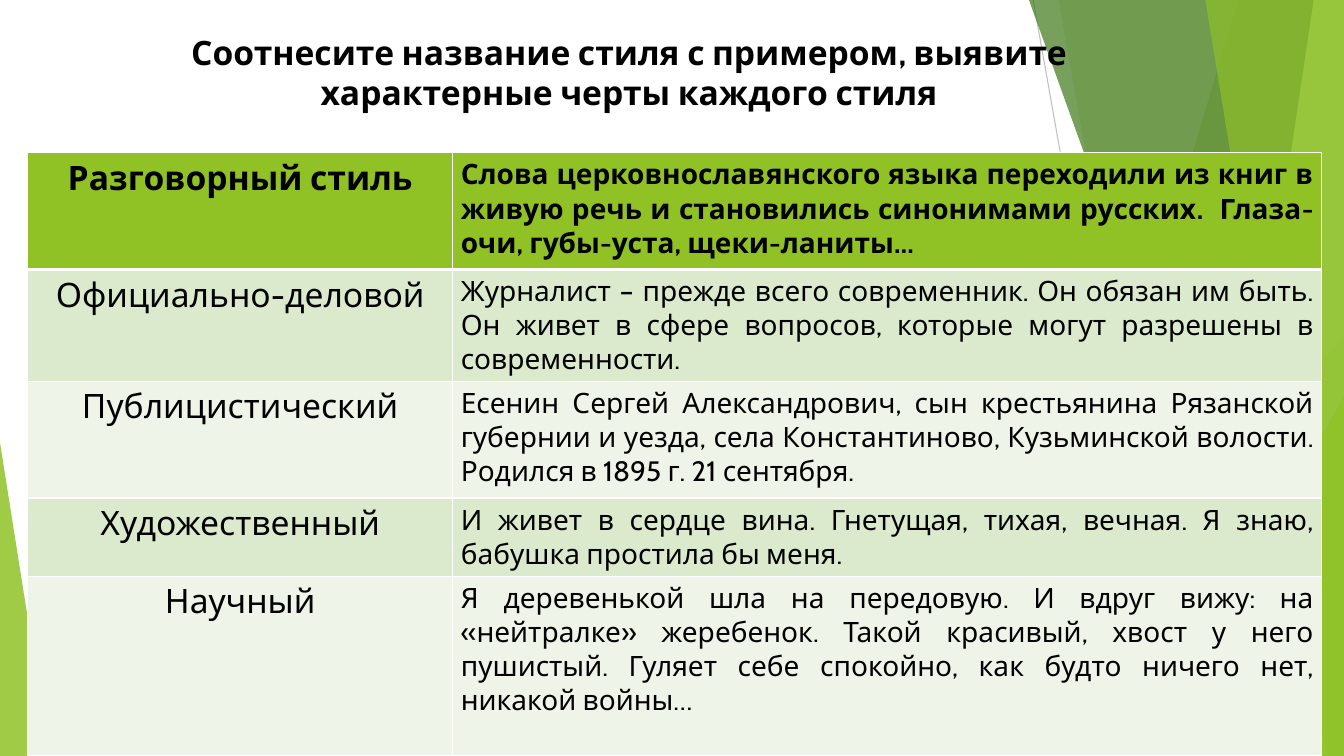
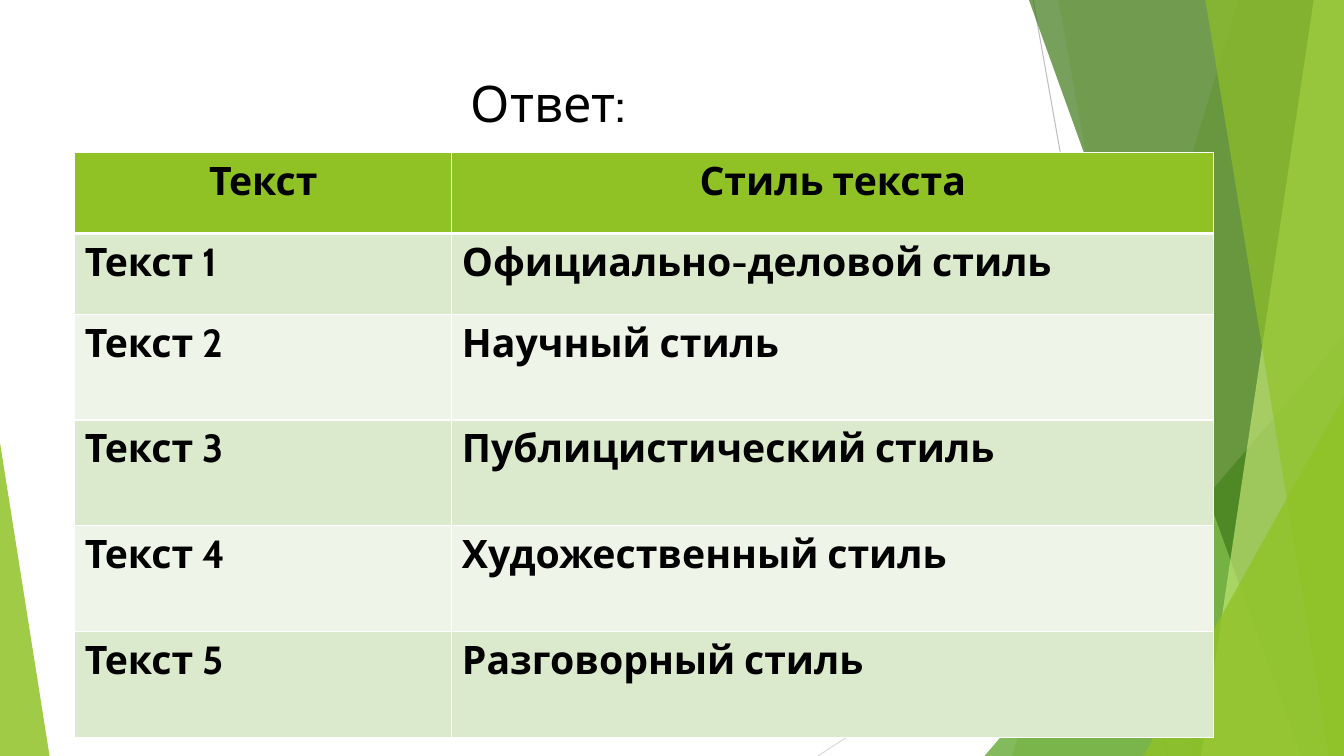
"""Build two slides on text styles: a matching exercise and its answers."""
from dataclasses import dataclass
from typing import Optional, Union

import lxml.etree
import pptx
import pptx.dml.color
import pptx.enum.shapes
import pptx.enum.text
import pptx.oxml
import pptx.oxml.ns
import pptx.util

COLUMNS, ROWS = 160, 90
CELL = pptx.util.Inches(7.5) / ROWS
FONT = "Cabin"
BLACK, WHITE = "000000", "FFFFFF"
LIME, GREEN, FOREST, PALE_LIME = "90C226", "54A021", "3F7819", "C0E474"
BAND_COLOURS = ("DBE9CD", "EEF4E8")
ALIGN = pptx.enum.text.PP_ALIGN
qn = pptx.oxml.ns.qn


@dataclass(frozen=True)
class Ray:
    start: tuple[float, float]
    end: tuple[float, float]
    colour: str


@dataclass(frozen=True)
class Veil:
    top_x: float
    bottom_x: float
    colour: str
    opacity: int


@dataclass(frozen=True)
class Corner:
    left: float
    top: float
    width: float
    apex: float
    colour: str
    opacity: int


@dataclass(frozen=True)
class Title:
    text: str
    top: float
    width: float
    height: float
    size: int


@dataclass(frozen=True)
class TextColumn:
    width: float
    size: int
    align: ALIGN
    header_align: ALIGN


@dataclass(frozen=True)
class Grid:
    left: float
    columns: tuple[TextColumn, ...]
    heights: tuple[float, ...]
    rows: tuple[tuple[str, ...], ...]
    bold_body: bool
    side_inset: Optional[float] = None


DECOR: tuple[Union[Ray, Veil, Corner], ...] = (
    Ray((123, 0), (139, ROWS), "BFBFBF"),
    Ray((COLUMNS, 48.4), (97.4, ROWS), "D9D9D9"),
    Veil(147.4, 120.5, LIME, 30),
    Veil(126, 142, LIME, 20),
    Corner(117.2, 40, 42.8, 1, GREEN, 72),
    Veil(122.5, 154.9, FOREST, 70),
    Veil(156.4, 143, PALE_LIME, 70),
    Veil(143.5, 158.2, LIME, 65),
    Corner(136.1, 47.2, 23.9, 1, LIME, 80),
    Corner(0, 52.7, 5.9, 0, LIME, 85),
)
MARGIN = 8.9
TABLE_TOP = 18.2

EXERCISE_TITLE = Title(
    "Соотнесите название стиля с примером, выявите характерные черты каждого стиля",
    3.2, 132, 21.4, 24)
EXERCISE = Grid(
    3.3,
    (TextColumn(50.6, 24, ALIGN.CENTER, ALIGN.CENTER),
     TextColumn(103.4, 20, ALIGN.JUSTIFY, ALIGN.JUSTIFY)),
    (13.9, 13.3, 13.9, 9.3, 21.4),
    (("Разговорный стиль",
      "Слова церковнославянского языка переходили из книг в живую речь и становились "
      "синонимами русских.  Глаза-очи, губы-уста, щеки-ланиты…"),
     ("Официально-деловой",
      "Журналист – прежде всего современник. Он обязан им быть. Он живет в сфере "
      "вопросов, которые могут разрешены в современности."),
     ("Публицистический",
      "Есенин Сергей Александрович, сын крестьянина Рязанской губернии и уезда, села "
      "Константиново, Кузьминской волости. Родился в 1895 г. 21 сентября."),
     ("Художественный",
      "И живет в сердце вина. Гнетущая, тихая, вечная. Я знаю, бабушка простила бы меня."),
     ("Научный",
      "Я деревенькой шла на передовую. И вдруг вижу: на «нейтралке» жеребенок. Такой "
      "красивый, хвост у него пушистый. Гуляет себе спокойно, как будто ничего нет, "
      "никакой войны…")),
    bold_body=False,
    side_inset=0.08,
)

ANSWER_TITLE = Title("Ответ:", 8, 112.8, 17.3, 36)
ANSWER_STYLES = ("Официально-деловой", "Научный", "Публицистический",
                 "Художественный", "Разговорный")
ANSWERS = Grid(
    MARGIN,
    (TextColumn(44.9, 28, ALIGN.LEFT, ALIGN.CENTER),
     TextColumn(90.7, 28, ALIGN.LEFT, ALIGN.CENTER)),
    (9.6, 9.6) + (12.6,) * 4,
    (("Текст", "Стиль текста"),
     *((f"Текст {number}", f"{style} стиль")
       for number, style in enumerate(ANSWER_STYLES, 1))),
    bold_body=True,
)


def units(cells: float) -> pptx.util.Emu:
    """Turn a count of grid cells into a length."""
    return pptx.util.Emu(round(cells * CELL))


def colour(code: str) -> pptx.dml.color.RGBColor:
    """Turn a hex string into a colour."""
    return pptx.dml.color.RGBColor.from_string(code)


def paint(shape, code: str, opacity: int) -> None:
    """Give a shape a see-through fill, without outline or shadow."""
    shape.shadow.inherit = False
    shape.line.fill.background()
    shape.fill.solid()
    shape.fill.fore_color.rgb = colour(code)
    tint = shape.fill._xPr.find(qn("a:solidFill"))[0]
    lxml.etree.SubElement(tint, qn("a:alpha"), val=str(opacity * 1000))


def draw_ray(page, ray: Ray) -> None:
    """Draw a thin straight line."""
    line = page.shapes.add_connector(
        pptx.enum.shapes.MSO_CONNECTOR.STRAIGHT,
        *(units(value) for value in ray.start + ray.end))
    line.line.color.rgb = colour(ray.colour)
    line.line.width = pptx.util.Pt(0.75)
    lxml.etree.SubElement(line._element.spPr, qn("a:effectLst"))


def draw_veil(page, veil: Veil) -> None:
    """Draw a full-height panel that runs to the right edge."""
    outline = page.shapes.build_freeform(units(veil.top_x), 0)
    corners = ((COLUMNS, 0), (COLUMNS, ROWS), (veil.bottom_x, ROWS))
    outline.add_line_segments([(units(x), units(y)) for x, y in corners], close=True)
    paint(outline.convert_to_shape(), veil.colour, veil.opacity)


def draw_corner(page, corner: Corner) -> None:
    """Draw a right triangle that stands on the bottom edge."""
    triangle = page.shapes.add_shape(
        pptx.enum.shapes.MSO_SHAPE.ISOSCELES_TRIANGLE,
        units(corner.left), units(corner.top),
        units(corner.width), units(ROWS - corner.top))
    triangle.adjustments[0] = corner.apex
    paint(triangle, corner.colour, corner.opacity)


def draw_decor(page) -> None:
    """Draw the shared background from back to front."""
    painters = {Ray: draw_ray, Veil: draw_veil, Corner: draw_corner}
    for item in DECOR:
        painters[type(item)](page, item)


def write(frame, text: str, size: int, bold: bool, align: ALIGN) -> None:
    """Put one formatted paragraph into a text frame."""
    para = frame.paragraphs[0]
    para.text = text
    para.alignment = align
    para.font.name = FONT
    para.font.size = pptx.util.Pt(size)
    para.font.bold = bold
    para.font.color.rgb = colour(BLACK)


def draw_title(page, title: Title, bold: bool) -> None:
    """Draw a centred slide title."""
    box = page.shapes.add_textbox(
        units(MARGIN), units(title.top), units(title.width), units(title.height))
    box.text_frame.word_wrap = True
    write(box.text_frame, title.text, title.size, bold, ALIGN.CENTER)


def set_borders(cell, top: int, bottom: int) -> None:
    """Draw white cell borders, one point wide at the sides."""
    properties = cell._tc.get_or_add_tcPr()
    sides = (("L", 1), ("R", 1), ("T", top), ("B", bottom))
    for place, (side, width) in enumerate(sides):
        border = lxml.etree.Element(qn(f"a:ln{side}"), w=str(pptx.util.Pt(width)))
        fill = lxml.etree.SubElement(border, qn("a:solidFill"))
        lxml.etree.SubElement(fill, qn("a:srgbClr"), val=WHITE)
        properties.insert(place, border)


def draw_grid(page, grid: Grid) -> None:
    """Draw a table with a lime header and banded rows."""
    table = page.shapes.add_table(
        len(grid.rows), len(grid.columns), units(grid.left), units(TABLE_TOP),
        units(sum(column.width for column in grid.columns)),
        units(sum(grid.heights))).table
    table.horz_banding = False
    for index, column in enumerate(grid.columns):
        table.columns[index].width = units(column.width)
    for row, (height, texts) in enumerate(zip(grid.heights, grid.rows)):
        table.rows[row].height = units(height)
        header = row == 0
        shade = LIME if header else BAND_COLOURS[(row - 1) % 2]
        for index, (column, text) in enumerate(zip(grid.columns, texts)):
            cell = table.cell(row, index)
            cell.fill.solid()
            cell.fill.fore_color.rgb = colour(shade)
            set_borders(cell, 3 if row == 1 else 1, 3 if header else 1)
            if grid.side_inset is not None:
                cell.margin_left = cell.margin_right = pptx.util.Inches(grid.side_inset)
            write(cell.text_frame, text, column.size, header or grid.bold_body,
                  column.header_align if header else column.align)


def main() -> None:
    """Build and save the deck."""
    deck = pptx.Presentation()
    deck.slide_width, deck.slide_height = units(COLUMNS), units(ROWS)
    blank = deck.slide_layouts[6]
    for title, bold, grid in ((EXERCISE_TITLE, True, EXERCISE),
                              (ANSWER_TITLE, False, ANSWERS)):
        page = deck.slides.add_slide(blank)
        draw_decor(page)
        draw_title(page, title, bold)
        draw_grid(page, grid)
    deck.save("out.pptx")


if __name__ == "__main__":
    main()
